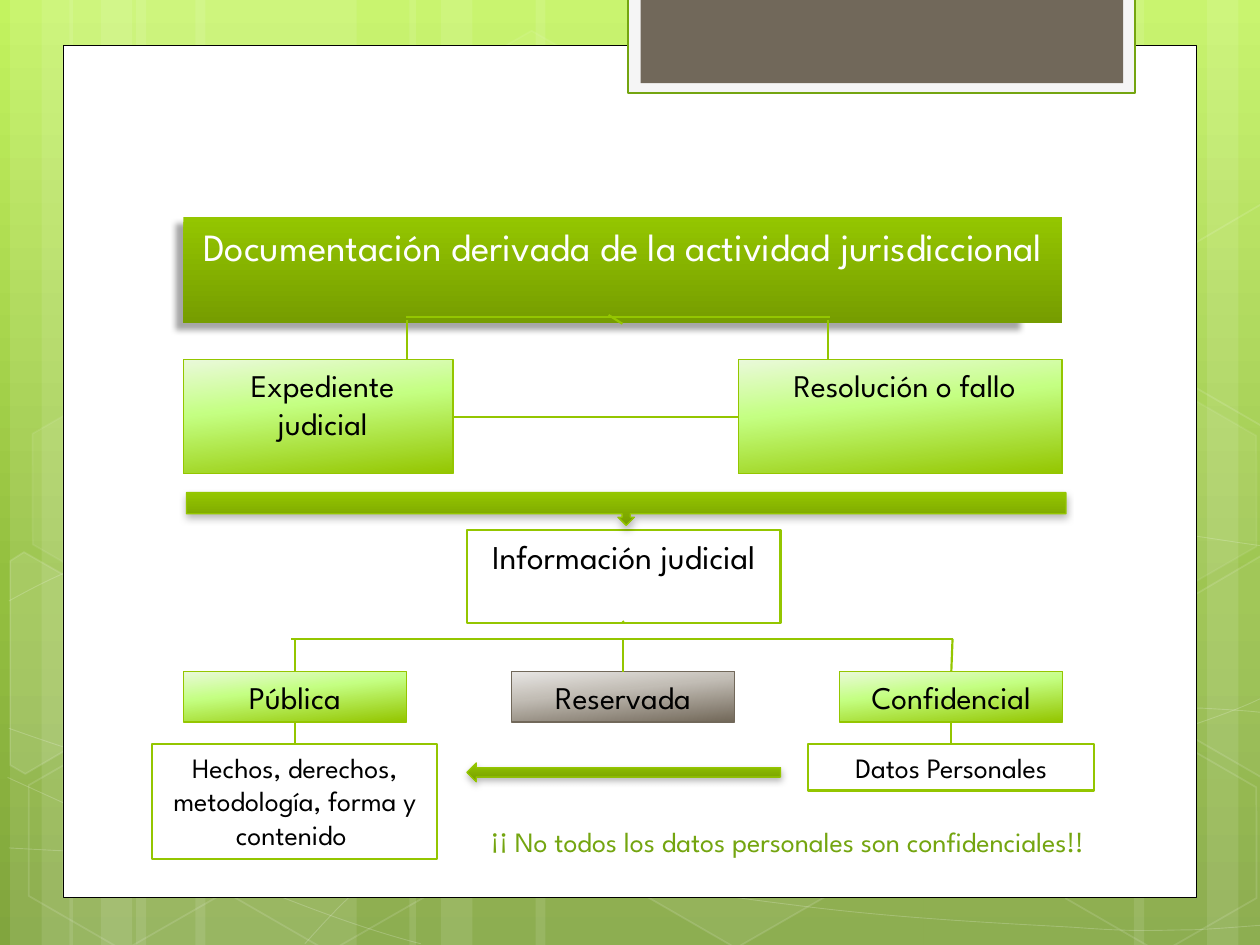
"""Builds a slide on court documents as a flow chart, on a grid of 100 by 75 cells."""
import math
from typing import NamedTuple, Optional

from lxml import etree
from pptx import Presentation
from pptx import util as u
from pptx.dml.color import RGBColor
from pptx.enum import shapes, text
from pptx.oxml.ns import qn

COLS, ROWS = 100, 75
CELL = u.Inches(0.1)
TURN = 30
FONT = "League Spartan"
GREEN, MOSS, GREY, WHITE, BLACK = "94C600", "74A510", "71685A", "FFFFFF", "000000"
LIGHT = ((0, "EAF9DA"), (40, "C4FF82"), (100, GREEN))
DULL = ((0, "E8E6E4"), (40, "C2BDB5"), (100, "726859"))
DEEP = ((0, GREEN), (100, "769D00"))
SKY = ((0, "C3F35F"), (62, "93BF3F"), (100, "81A53E"))
KIND = shapes.MSO_SHAPE


class Area(NamedTuple):
    """A place on the grid in columns and rows."""
    col: float
    row: float
    wide: float
    high: float


class Box(NamedTuple):
    """A labelled box of the chart."""
    name: str
    area: Area
    label: str
    size: float
    fill: object = WHITE
    edge: str = GREEN
    width: float = 1.25
    pad: float = 0


class Shade(NamedTuple):
    """A shadow that falls straight down."""
    alpha: int
    blur: float
    dist: float
    scale: int = 100


class Hexa(NamedTuple):
    """A background hexagon with its fill and line opacity."""
    col: float
    row: float
    fill: int
    line: int


class Part(NamedTuple):
    """A cut hexagon: its middle, corners and fill opacity."""
    mid: tuple
    dots: list
    fill: int


def cells(num: float) -> int:
    """Turn grid cells into a length."""
    return round(num * CELL)


def tint(code: str) -> RGBColor:
    """Turn a hex string into a colour."""
    return RGBColor.from_string(code)


def fade(node, pct: int) -> None:
    """Set the opacity of every solid colour in a node."""
    for clr in node.iter(qn("a:srgbClr")):
        etree.SubElement(clr, qn("a:alpha")).set("val", str(pct * 1000))


def blend(host, fill, stops, angle: float) -> None:
    """Give a fill a linear gradient."""
    fill.gradient()
    fill.gradient_angle = 360 - angle
    group = next(host.iter(qn("a:gsLst")))
    for old in list(group):
        group.remove(old)
    for pos, code in stops:
        stop = etree.SubElement(group, qn("a:gs"), pos=str(pos * 1000))
        etree.SubElement(stop, qn("a:srgbClr"), val=code)


def paint(shape, fill, edge: Optional[str] = None, width: float = 0.75,
          shade: Optional[Shade] = None, angle: float = 90) -> None:
    """Set the fill, line and shadow of a shape."""
    shape.shadow.inherit = False
    if fill is None:
        shape.fill.background()
    elif isinstance(fill, str):
        shape.fill.solid()
        shape.fill.fore_color.rgb = tint(fill)
    else:
        blend(shape._element, shape.fill, fill, angle)
    if edge:
        shape.line.color.rgb = tint(edge)
        shape.line.width = u.Pt(width)
    else:
        shape.line.fill.background()
    if shade:
        drop = etree.SubElement(
            shape._element.spPr.find(qn("a:effectLst")), qn("a:outerShdw"),
            blurRad=str(u.Pt(shade.blur)), dist=str(u.Pt(shade.dist)),
            dir="5400000", sx=str(shade.scale * 1000), rotWithShape="0")
        etree.SubElement(drop, qn("a:srgbClr"), val=BLACK)
        fade(drop, shade.alpha)


def form(slide, kind, area: Area):
    """Add a preset shape."""
    return slide.shapes.add_shape(kind, *map(cells, area))


def write(shape, label: str, size: float, code: str = BLACK, pad: float = 0) -> None:
    """Put one centred run at the top of a shape."""
    frame = shape.text_frame
    frame.word_wrap = True
    frame.auto_size = text.MSO_AUTO_SIZE.NONE
    frame.vertical_anchor = text.MSO_ANCHOR.TOP
    para = frame.paragraphs[0]
    para.alignment = text.PP_ALIGN.CENTER
    if pad:
        para._p.get_or_add_pPr().set("marL", str(cells(pad)))
    run = para.add_run()
    run.text = label
    run.font.name, run.font.size = FONT, u.Pt(size)
    run.font.color.rgb = tint(code)


def link(slide, start: tuple, end: tuple):
    """Draw a straight green line between two grid points."""
    line = slide.shapes.add_connector(shapes.MSO_CONNECTOR.STRAIGHT, *map(cells, start + end))
    line.line.color.rgb = tint(GREEN)
    line.line.width = u.Pt(1.25)
    etree.SubElement(line._element.spPr, qn("a:effectLst"))
    return line


def trace(slide, dots: list, closed: bool, fill: int, width: float, alpha: int):
    """Draw a faint white outline through grid points."""
    spots = [tuple(map(cells, dot)) for dot in dots]
    pen = slide.shapes.build_freeform(*spots[0])
    pen.add_line_segments(spots[1:], close=closed)
    shape = pen.convert_to_shape()
    paint(shape, WHITE if fill else None, WHITE, width)
    veil(shape, fill, alpha)
    return shape


def bend(shape) -> None:
    """Join each three line segments of an outline into one cubic curve."""
    track = next(shape._element.iter(qn("a:path")))
    legs = track.findall(qn("a:lnTo"))
    for at in range(0, len(legs), 3):
        arc = etree.SubElement(track, qn("a:cubicBezTo"))
        for leg in legs[at:at + 3]:
            arc.append(leg[0])
            track.remove(leg)


def spin(dot: tuple, mid: tuple, angle: float) -> tuple:
    """Turn a point about a middle."""
    cos, sin = math.cos(math.radians(angle)), math.sin(math.radians(angle))
    dx, dy = dot[0] - mid[0], dot[1] - mid[1]
    return mid[0] + dx * cos - dy * sin, mid[1] + dx * sin + dy * cos


def veil(shape, fill: int, alpha: int) -> None:
    """Set the opacity of a shape's fill and line."""
    for tag, pct in (("a:solidFill", fill), ("a:ln", alpha)):
        node = shape._element.spPr.find(qn(tag))
        if node is not None:
            fade(node, pct)


BANDS = ((10.8, 17.5), (0.8, 5), (3.3, 8.3), (15.5, 17.5), (5.5, 5), (8, 8.3), (73.3, 17.5),
         (95.8, 5), (90, 8.3), (42.5, 30.8), (32.5, 5), (35, 8.3))
WAVES = (
    [(0.7, 67.3), (6.1, 67.6), (11.5, 67.9), (19, 67.8), (26.5, 67.7), (35.8, 67.5), (45.8, 66.5),
     (55.8, 65.5), (70, 63.6), (79.2, 61.7), (88.3, 59.8), (97.7, 56.8), (100.7, 55.1)],
    [(0.7, 47.7), (3.6, 46.1), (6.5, 44.6), (12.1, 43.1), (17.8, 41.6), (25.9, 39.4), (34.7, 38.7),
     (43.6, 38), (54.4, 37.9), (65.4, 38.7), (76.4, 39.5), (94.7, 42.6), (100.7, 43.4)],
    [(0.6, 61.7), (12.7, 67.2), (24.7, 72.7), (33.4, 74.9)],
    [(0.7, 57.8), (3.8, 58.9), (7, 60), (12.8, 61.6), (18.6, 63.1), (27.3, 65.6), (35.7, 67.3),
     (44, 69), (54.5, 70.8), (62.8, 71.8), (71.1, 72.9), (80, 73.3), (85.3, 73.6),
     (90.5, 74), (91.9, 73.8), (94.5, 73.8), (97.1, 73.7), (98.9, 73.5), (100.7, 73.4)],
    [(24.2, 74.9), (26, 72.9), (27.8, 70.9), (30.2, 69.1), (32.6, 67.3), (36, 65.3), (38.8, 63.9),
     (41.6, 62.5), (43.3, 61.9), (47, 60.9), (50.6, 59.9), (57.3, 58.5), (60.8, 57.8),
     (64.4, 57.1), (64.9, 57.1), (68, 56.9), (71.1, 56.6), (76, 56.3), (79.4, 56.2),
     (82.9, 56.1), (88.6, 56.2), (88.6, 56.2), (88.6, 56.2), (95.3, 56.2), (95.3, 56.2),
     (97.1, 56.3), (98.8, 56.4), (99.7, 56.5), (100.6, 56.6), (100.3, 56.5), (100.6, 56.6)])
HEXES = (Hexa(33.4, 3.6, 4, 8), Hexa(49.7, 58.9, 6, 12), Hexa(1.1, 59.1, 0, 12),
         Hexa(1.4, 31.2, 7, 8), Hexa(17.4, 59.2, 0, 12), Hexa(75.3, 45.3, 10, 12),
         Hexa(83.4, 59.3, 0, 12), Hexa(83.4, 31.4, 7, 8))
EDGE = [(92.6, 48.5), (100.1, 44.1), (100.9, 44.6), (100.9, 61.3), (100.2, 61.7), (92.6, 57.3)]
RISE = 27.9
PARTS = (
    Part((3.6, 53.5), [(0.8, 44.5), (1.9, 43.8), (9.6, 48.2), (9.5, 57), (2, 61.4),
                       (0.8, 60.7)], 10),
    Part((98.5, 52), EDGE, 4),
    Part((98.5, 52 - RISE), [(col, row - RISE) for col, row in EDGE], 0))
BOXES = (
    Box("file", Area(14.55, 28.55, 21.4, 9.05), "Expediente judicial", 18, LIGHT, GREEN, 0.75, 0.7),
    Box("ruling", Area(58.6, 28.55, 25.7, 9.05), "Resolución o fallo", 18, LIGHT, GREEN, 0.75, 0.7),
    Box("info", Area(37.05, 42.05, 24.9, 7.4), "Información judicial", 19),
    Box("open", Area(14.55, 53.3, 17.7, 4), "Pública", 18, LIGHT, GREEN, 0.75),
    Box("held", Area(40.6, 53.3, 17.7, 4), "Reservada", 18, DULL, GREY, 0.75),
    Box("secret", Area(66.65, 53.3, 17.7, 4), "Confidencial", 18, LIGHT, GREEN, 0.75),
    Box("data", Area(64.15, 59.05, 22.7, 3.7), "Datos Personales", 16),
    Box("facts", Area(12.1, 59.05, 22.6, 9.1), "Hechos, derechos, metodología, forma y contenido ", 16))
LINES = (((49.4, 25.7), (48.3, 25)), ((48.3, 25.15), (65.9, 25.15)), ((65.7, 25.4), (65.7, 28.5)),
         ((48.3, 25.15), (32.2, 25.15)), ((32.3, 25.4), (32.3, 28.5)),
         ((49.5, 49.4), (49.4, 49.3)), ((23.1, 50.7), (75.6, 50.7)))
DROPS = (("open", 23.4), ("held", 49.45), ("secret", 75.6))
JOINS = (("file", 3, "ruling", 1), ("open", 2, "facts", 0), ("secret", 2, "data", 0))


def scene(slide) -> None:
    """Draw the green background and the framed page."""
    blend(slide._element, slide.background.fill, SKY, 90)
    for col, wide in BANDS:
        band = form(slide, KIND.RECTANGLE, Area(col, 0, wide, ROWS))
        paint(band, WHITE)
        veil(band, 10, 0)
    for wave in WAVES:
        bend(trace(slide, wave, False, 0, 0.5, 20))
    for hexa in HEXES:
        shape = form(slide, KIND.HEXAGON, Area(hexa.col, hexa.row, 17.5, 15.2))
        shape.rotation = TURN
        shape.adjustments[0] = 0.29
        paint(shape, WHITE if hexa.fill else None, WHITE, 1)
        veil(shape, hexa.fill, hexa.line)
    for part in PARTS:
        flat = [spin(dot, part.mid, -TURN) for dot in part.dots]
        trace(slide, flat, True, part.fill, 1, 12).rotation = TURN
    for area, fill, edge, width in ((Area(5, 3.6, 90, 67.65), WHITE, BLACK, 0.5),
                                    (Area(49.85, -0.2, 40.2, 7.6), "F5F5F5", MOSS, 1.25),
                                    (Area(50.85, -0.2, 38.3, 6.8), GREY, None, 0)):
        paint(form(slide, KIND.RECTANGLE, area), fill, edge, width)


def chart(slide) -> None:
    """Draw the title bar, the boxes, the lines and the arrows."""
    title = slide.shapes.title
    title.left, title.top, title.width, title.height = map(cells, Area(14.55, 17.2, 69.75, 8.4))
    slide.shapes._spTree.append(title._element)
    paint(title, DEEP, shade=Shade(34, 3.5, 4, 96))
    write(title, "Documentación derivada de la actividad jurisdiccional", 22, WHITE)
    made = {}
    for box in BOXES:
        made[box.name] = shape = form(slide, KIND.RECTANGLE, box.area)
        paint(shape, box.fill, box.edge, box.width, angle=84)
        write(shape, box.label, box.size, pad=box.pad)
    for start, end in LINES:
        link(slide, start, end)
    for name, col in DROPS:
        link(slide, (col, 50.7), (col, 53.3)).end_connect(made[name], 0)
    for first, out, last, into in JOINS:
        line = link(slide, (0, 0), (1, 1))
        line.begin_connect(made[first], out)
        line.end_connect(made[last], into)
    for kind, area in ((KIND.DOWN_ARROW_CALLOUT, Area(14.8, 39.1, 69.8, 2.6)),
                       (KIND.LEFT_ARROW, Area(37.05, 60.55, 24.9, 1.5))):
        paint(form(slide, kind, area), DEEP, GREEN, shade=Shade(28, 4, 2))
    note = slide.shapes.add_textbox(*map(cells, Area(37.05, 64.95, 50.9, 6.4)))
    write(note, "¡¡ No todos los datos personales son confidenciales!!", 16, MOSS)


def main() -> None:
    """Build and save the slide."""
    deck = Presentation()
    deck.slide_width, deck.slide_height = cells(COLS), cells(ROWS)
    slide = deck.slides.add_slide(deck.slide_layouts[5])
    scene(slide)
    chart(slide)
    deck.save("out.pptx")


if __name__ == "__main__":
    main()
